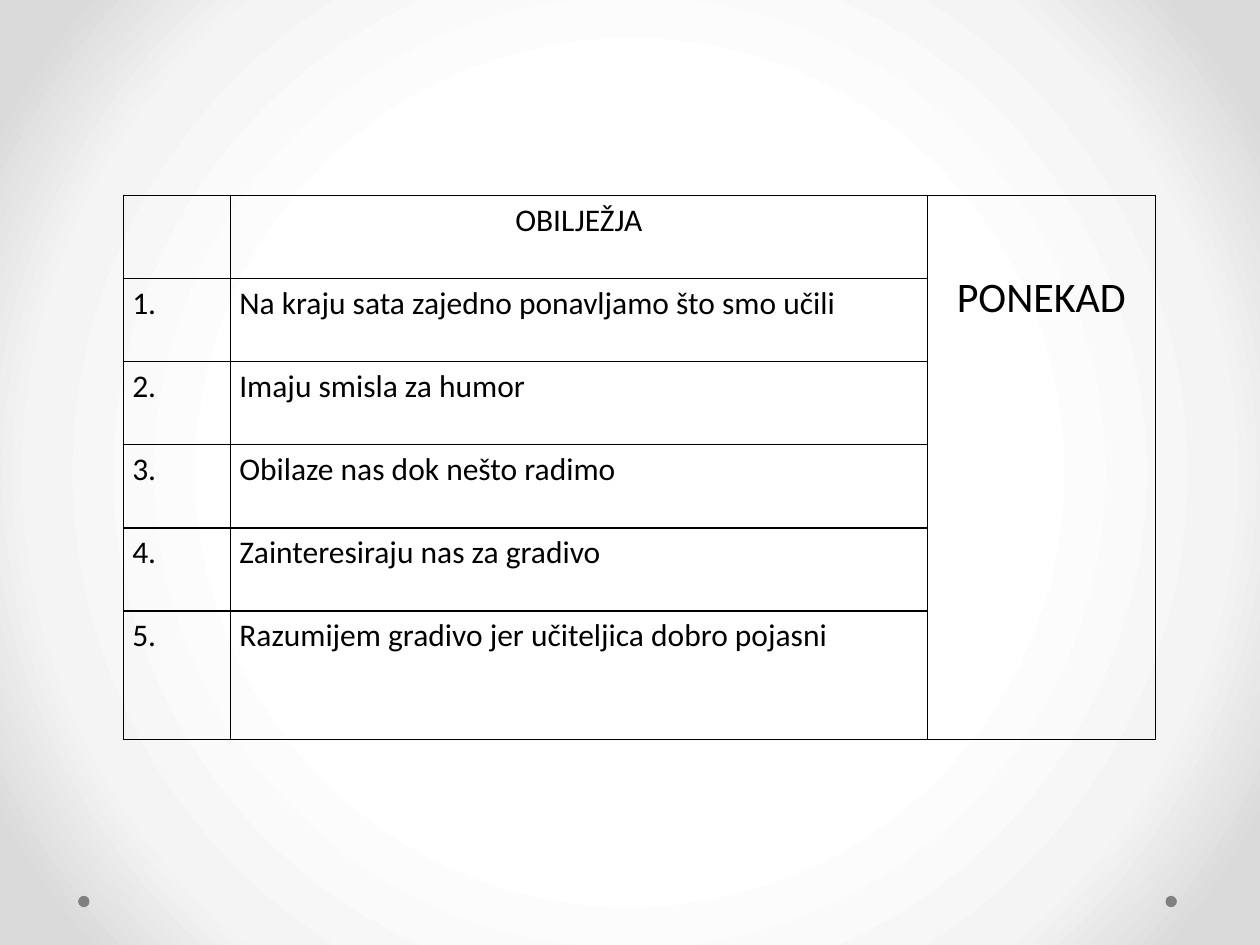
"""Build a slide with a ruled table of teaching traits."""
import pptx
import pptx.dml.color
import pptx.enum.shapes
import pptx.enum.text
import pptx.oxml
import pptx.oxml.ns
import pptx.util

Inches = pptx.util.Inches
RGBColor = pptx.dml.color.RGBColor
CENTER = pptx.enum.text.PP_ALIGN.CENTER
BLACK = RGBColor(0x00, 0x00, 0x00)
GREY = RGBColor(0x80, 0x80, 0x80)
GLOW = [
    (50, RGBColor(0xFF, 0xFF, 0xFF)),
    (76, RGBColor(0xF4, 0xF4, 0xF4)),
    (92, RGBColor(0xDA, 0xDA, 0xDA)),
]
COLS = [0.85, 5.53, 1.81]
ROWS = [0.66] * 5 + [1.02]
TRAITS = [
    "Na kraju sata zajedno ponavljamo što smo učili",
    "Imaju smisla za humor",
    "Obilaze nas dok nešto radimo",
    "Zainteresiraju nas za gradivo",
    "Razumijem gradivo jer učiteljica dobro pojasni",
]


def set_background(s):
    """Fill the slide background with a circular gradient."""
    stops = "".join(
        f'<a:gs pos="{pos * 1000}"><a:srgbClr val="{color}"/></a:gs>'
        for pos, color in GLOW
    )
    bg = pptx.oxml.parse_xml(
        f'<p:bg {pptx.oxml.ns.nsdecls("p", "a")}><p:bgPr>'
        f'<a:gradFill rotWithShape="1"><a:gsLst>{stops}</a:gsLst>'
        '<a:path path="circle">'
        '<a:fillToRect l="50000" t="50000" r="50000" b="50000"/>'
        '</a:path></a:gradFill><a:effectLst/></p:bgPr></p:bg>'
    )
    s.element.cSld.insert(0, bg)


def add_dot(s, left):
    """Add a small grey dot near the bottom edge."""
    size = Inches(0.09)
    sp = s.shapes.add_shape(
        pptx.enum.shapes.MSO_SHAPE.OVAL, Inches(left), Inches(7.11), size, size
    )
    sp.shadow.inherit = False
    sp.fill.solid()
    sp.fill.fore_color.rgb = GREY
    sp.line.fill.background()


def style_cell(cell):
    """Clear the fill, set the insets and draw all four borders."""
    cell.fill.background()
    cell.margin_left = cell.margin_right = Inches(0.07)
    cell.margin_top = cell.margin_bottom = 0
    tcPr = cell._tc.get_or_add_tcPr()
    for i, side in enumerate("LRTB"):
        tcPr.insert(i, pptx.oxml.parse_xml(
            f'<a:ln{side} {pptx.oxml.ns.nsdecls("a")} w="12700"><a:solidFill>'
            f'<a:srgbClr val="{BLACK}"/></a:solidFill></a:ln{side}>'
        ))


def write_cell(cell, text, size=18, align=None):
    """Write one run of black Calibri text into a cell."""
    p = cell.text_frame.paragraphs[0]
    p.alignment = align
    p.line_spacing = 1.15
    r = p.add_run()
    r.text = text
    r.font.name = "Calibri"
    r.font.size = pptx.util.Pt(size)
    r.font.color.rgb = BLACK


def add_traits_table(s):
    """Add the table with numbered traits and the merged answer column."""
    table = s.shapes.add_table(
        len(ROWS), len(COLS), Inches(0.98), Inches(1.55),
        Inches(sum(COLS)), Inches(sum(ROWS)),
    ).table
    table.first_row = table.horz_banding = False
    for column, width in zip(table.columns, COLS):
        column.width = Inches(width)
    for row, height in zip(table.rows, ROWS):
        row.height = Inches(height)
    for cell in table.iter_cells():
        style_cell(cell)
    answer = table.cell(0, 2)
    answer.merge(table.cell(len(ROWS) - 1, 2))
    answer.margin_top = Inches(0.55)
    write_cell(answer, "PONEKAD", 24, CENTER)
    write_cell(table.cell(0, 1), "OBILJEŽJA", align=CENTER)
    for i, trait in enumerate(TRAITS, 1):
        write_cell(table.cell(i, 0), f"{i}.")
        write_cell(table.cell(i, 1), trait)


def main():
    """Build and save the slide."""
    prs = pptx.Presentation()
    prs.slide_width, prs.slide_height = Inches(10), Inches(7.5)
    s = prs.slides.add_slide(prs.slide_layouts[6])
    set_background(s)
    for left in (9.25, 0.62):
        add_dot(s, left)
    add_traits_table(s)
    prs.save("out.pptx")


if __name__ == "__main__":
    main()
